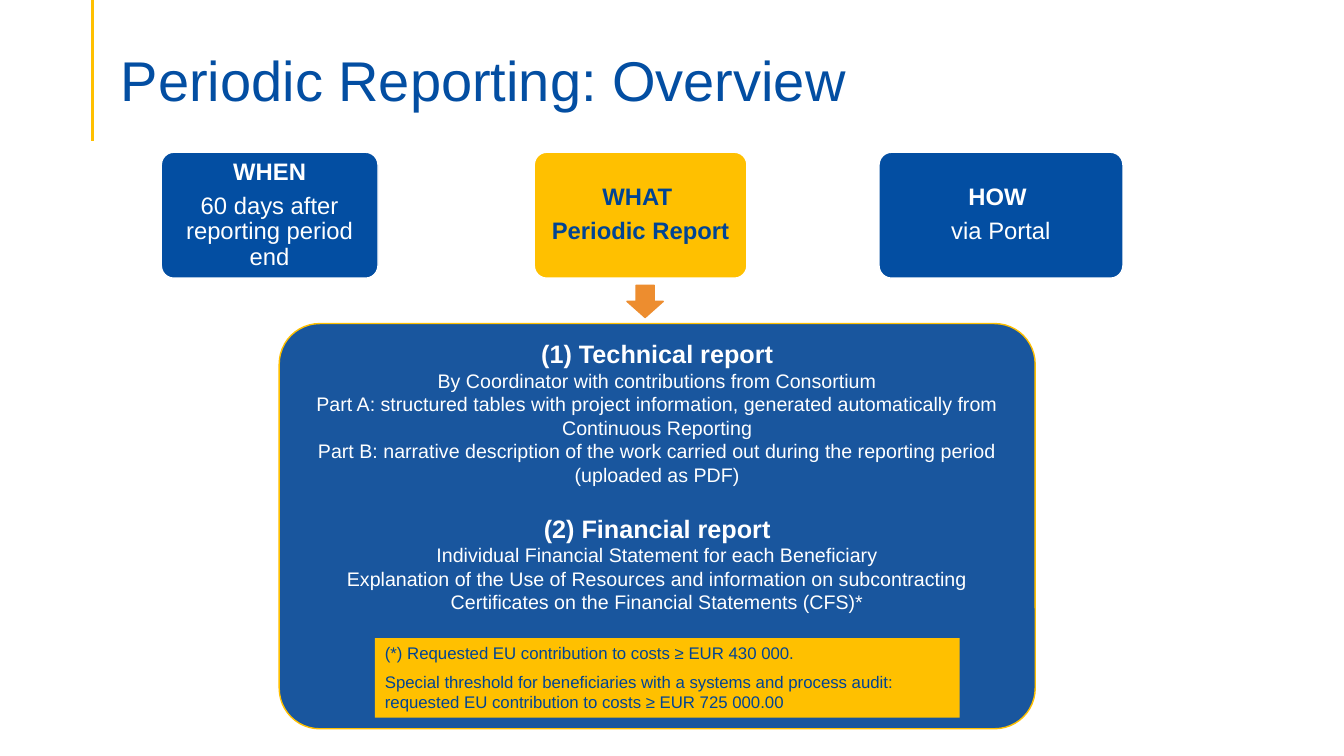
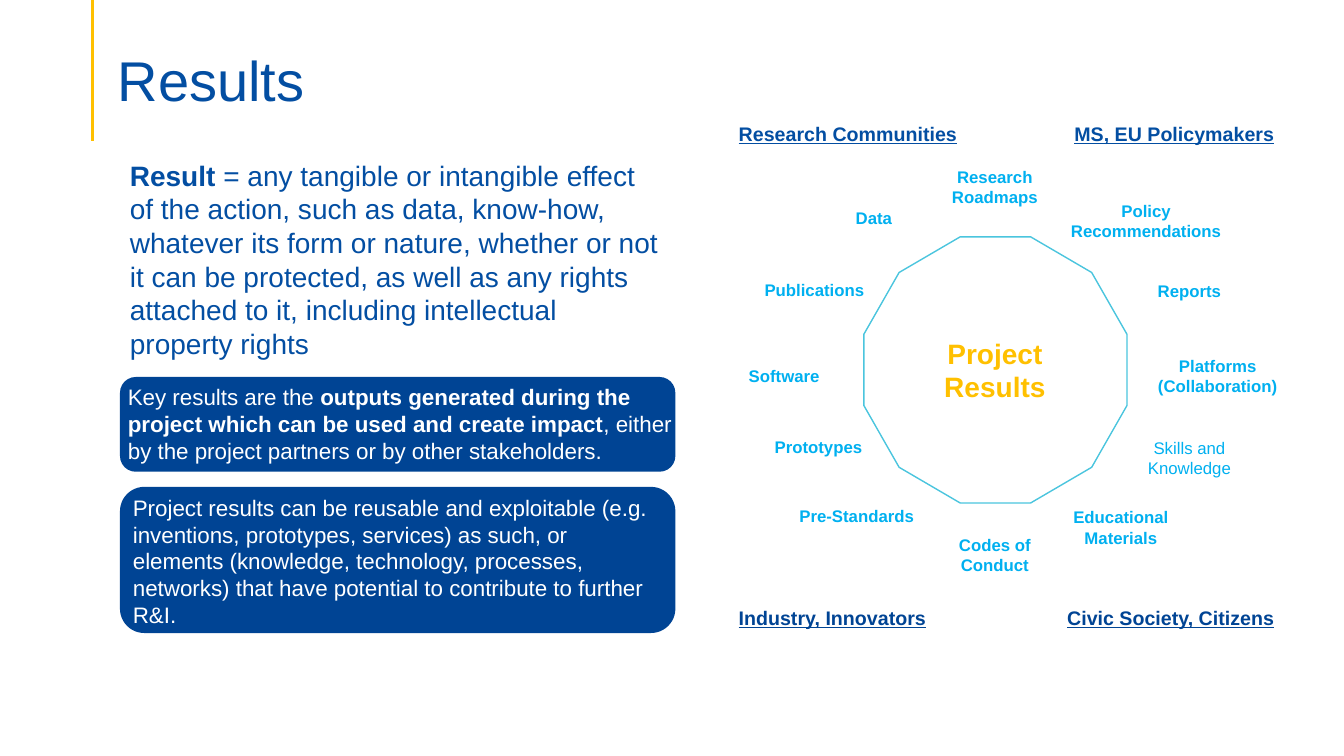
from lxml.etree import SubElement
from pptx import Presentation
from pptx.dml.color import RGBColor
from pptx.enum.shapes import MSO_CONNECTOR, MSO_SHAPE
from pptx.enum.text import MSO_ANCHOR, PP_ALIGN
from pptx.oxml.ns import qn
from pptx.util import Inches, Pt

COLORS = {
    "blue": "034EA2",
    "navy": "004494",
    "gold": "FFC000",
    "orange": "ED8D2F",
    "sky": "00B0F0",
    "teal": "4BC5DE",
    "white": "FFFFFF",
}
CENTER, LEFT, RIGHT = PP_ALIGN.CENTER, PP_ALIGN.LEFT, PP_ALIGN.RIGHT
MIDDLE, TOP, BOTTOM = MSO_ANCHOR.MIDDLE, MSO_ANCHOR.TOP, MSO_ANCHOR.BOTTOM
INSETS = (0.1, 0.05, 0.1, 0.05)


def rgb(name):
    return RGBColor.from_string(COLORS[name])


def set_all(target, values):
    for name, value in values.items():
        setattr(target, name, value)


class Deck:
    """Holds the shared style and the current slide, and draws each kind of element."""

    def __init__(self):
        self.prs = Presentation()
        set_all(self.prs, {"slide_width": Inches(13.333), "slide_height": Inches(7.5)})
        self.s = None

    def slide(self, title, left):
        self.s = self.prs.slides.add_slide(self.prs.slide_layouts[5])
        line = self.s.shapes.add_connector(
            MSO_CONNECTOR.STRAIGHT, Inches(0.92), 0, Inches(0.92), Inches(1.4))
        line.line.color.rgb = rgb("gold")
        line.line.width = Pt(2.25)
        SubElement(line._element.spPr, qn("a:effectLst"))
        sp = self.s.shapes.title
        set_all(sp, {"left": Inches(left), "top": Inches(0.29),
                     "width": Inches(11.46), "height": Inches(0.84)})
        self.fill_text(sp, [title], "blue", 40, anchor=BOTTOM,
                       insets=(0.1, 0.05, 0.1, 0), para={"line_spacing": 0.9})

    def fill_text(self, sp, paragraphs, color, size, bold=False, align=LEFT,
                  anchor=TOP, insets=INSETS, para=None, underline=None):
        tf = sp.text_frame
        left, top, right, bottom = map(Inches, insets)
        set_all(tf, {"word_wrap": True, "vertical_anchor": anchor,
                     "margin_left": left, "margin_top": top,
                     "margin_right": right, "margin_bottom": bottom})
        for i, runs in enumerate(paragraphs):
            p = tf.add_paragraph() if i else tf.paragraphs[0]
            set_all(p, {"alignment": align, **(para or {})})
            for run in [runs] if isinstance(runs, (str, tuple)) else runs:
                text, changes = (run, {}) if isinstance(run, str) else run
                r = p.add_run()
                r.text = text
                set_all(r.font, {"name": "Arial", "size": Pt(size), "bold": bold,
                                 "underline": underline, **changes})
                r.font.color.rgb = rgb(color)

    def text(self, box, paragraphs, color, size, **style):
        sp = self.s.shapes.add_textbox(*map(Inches, box))
        self.fill_text(sp, paragraphs, color, size, **style)

    def shape(self, kind, box, fill, line=None, radius=None, alpha=None):
        sp = self.s.shapes.add_shape(kind, *map(Inches, box))
        sp.shadow.inherit = False
        sp.fill.solid()
        sp.fill.fore_color.rgb = rgb(fill)
        if alpha:
            color = sp._element.spPr.find(qn("a:solidFill"))[0]
            SubElement(color, qn("a:alpha"), val=str(alpha * 1000))
        if line:
            sp.line.color.rgb = rgb(line)
            sp.line.width = Pt(1)
        else:
            sp.line.fill.background()
        if radius is not None:
            sp.adjustments[0] = radius
        return sp

    def step(self, left, width, fill, color, heading, detail, detail_bold=False):
        sp = self.shape(MSO_SHAPE.ROUNDED_RECTANGLE, (left, 1.51, width, 1.25),
                        fill, "white", 0.1)
        self.fill_text(sp, [heading, (detail, {"bold": detail_bold})], color, 17,
                       bold=True, align=CENTER, anchor=MIDDLE,
                       insets=(0.04, 0.02, 0.04, 0.02),
                       para={"line_spacing": 0.9, "space_after": Pt(6)})

    def card(self, box, text_box, runs):
        self.shape(MSO_SHAPE.ROUNDED_RECTANGLE, box, "navy")
        self.text(text_box, [runs], "white", 16)

    def label(self, x, y, text, width=1.37, height=0.65, color="sky", size=12, bold=True):
        self.text((x - width / 2, y - height / 2, width, height), [text], color, size,
                  bold=bold, align=CENTER, anchor=MIDDLE)


def overview(deck):
    deck.slide("Periodic Reporting: Overview", 1.1)
    deck.step(1.6, 2.15, "blue", "white", "WHEN", "60 days after reporting period end")
    deck.step(5.3, 2.11, "gold", "navy", "WHAT ", "Periodic Report", True)
    deck.step(8.72, 2.42, "blue", "white", "HOW ", "via Portal")
    deck.shape(MSO_SHAPE.DOWN_ARROW, (6.22, 2.83, 0.36, 0.32), "orange", "orange")

    heading = {"size": Pt(18), "bold": True}
    panel = deck.shape(MSO_SHAPE.ROUNDED_RECTANGLE, (2.77, 3.21, 7.5, 4.02),
                       "navy", "gold", 0.1, alpha=90)
    deck.fill_text(panel, [
        ("(1) Technical report", heading),
        "By Coordinator with contributions from Consortium",
        "Part A: structured tables with project information, generated automatically "
        "from Continuous Reporting",
        "Part B: narrative description of the work carried out during the reporting "
        "period (uploaded as PDF)",
        ("(2) Financial report", heading),
        "Individual Financial Statement for each Beneficiary",
        "Explanation of the Use of Resources and information on subcontracting",
        "Certificates on the Financial Statements (CFS)*",
    ], "white", 14, align=CENTER, insets=(0.04, 0.03, 0.04, 0.03))
    panel.text_frame.paragraphs[4].space_before = Pt(19)

    note = deck.shape(MSO_SHAPE.RECTANGLE, (3.72, 6.33, 5.8, 0.79), "gold")
    deck.fill_text(note, [
        "(*) Requested EU contribution to costs ≥ EUR 430 000.",
        "Special threshold for beneficiaries with a systems and process audit: "
        "requested EU contribution to costs ≥ EUR 725 000.00",
    ], "navy", 12, para={"space_after": Pt(6)})


def results(deck):
    deck.slide("Results", 1.07)
    deck.text((1.19, 1.52, 5.47, 2.12), [[
        ("Result", {"bold": True}),
        " = any tangible or intangible effect of the action, such as data, know-how, "
        "whatever its form or nature, whether or not it can be protected, as well as "
        "any rights attached to it, including intellectual property rights",
    ]], "blue", 20)
    deck.card((1.19, 3.74, 5.51, 0.94), (1.17, 3.75, 5.7, 0.91), [
        "Key results are the ",
        ("outputs generated during the project which can be used and create impact",
         {"bold": True}),
        ", either by the project partners or by other stakeholders.",
    ])
    deck.card((1.19, 4.83, 5.51, 1.45), (1.22, 4.85, 5.33, 1.45), [
        "Project results can be reusable and exploitable (e.g. inventions, prototypes, "
        "services) as such, or elements (knowledge, technology, processes, networks) "
        "that have potential to contribute to further R&I.",
    ])

    deck.shape(MSO_SHAPE.DODECAGON, (8.57, 2.35, 2.61, 2.64), "white", "teal")
    deck.label(9.87, 3.67, "Project Results", 1.72, 0.97, "gold", 20)
    for x, y, text in (
        (9.87, 1.85, "Research Roadmaps"),
        (11.8, 2.88, "Reports"),
        (11.12, 5.23, "Educational Materials"),
        (9.87, 5.5, "Codes of Conduct"),
        (8.5, 5.12, "Pre-Standards"),
        (8.12, 4.43, "Prototypes"),
        (7.78, 3.73, "Software"),
        (8.08, 2.87, "Publications"),
        (8.67, 2.16, "Data"),
    ):
        deck.label(x, y, text)
    deck.label(11.37, 2.19, "Policy Recommendations", 1.91)
    deck.label(12.08, 3.73, "Platforms (Collaboration)", 1.51)
    deck.label(11.8, 4.54, "Skills and Knowledge", bold=False)

    for top, color, audiences in (
        (1.02, "blue", ("Research Communities", "MS, EU Policymakers")),
        (5.82, "navy", ("Industry, Innovators", "Civic Society, Citizens")),
    ):
        for left, align, audience in zip((7.23, 10.02), (LEFT, RIGHT), audiences):
            deck.text((left, top, 2.72, 0.61), [audience], color, 14, bold=True,
                      align=align, anchor=MIDDLE, underline=True)


def main():
    deck = Deck()
    overview(deck)
    results(deck)
    deck.prs.save("out.pptx")


if __name__ == "__main__":
    main()
